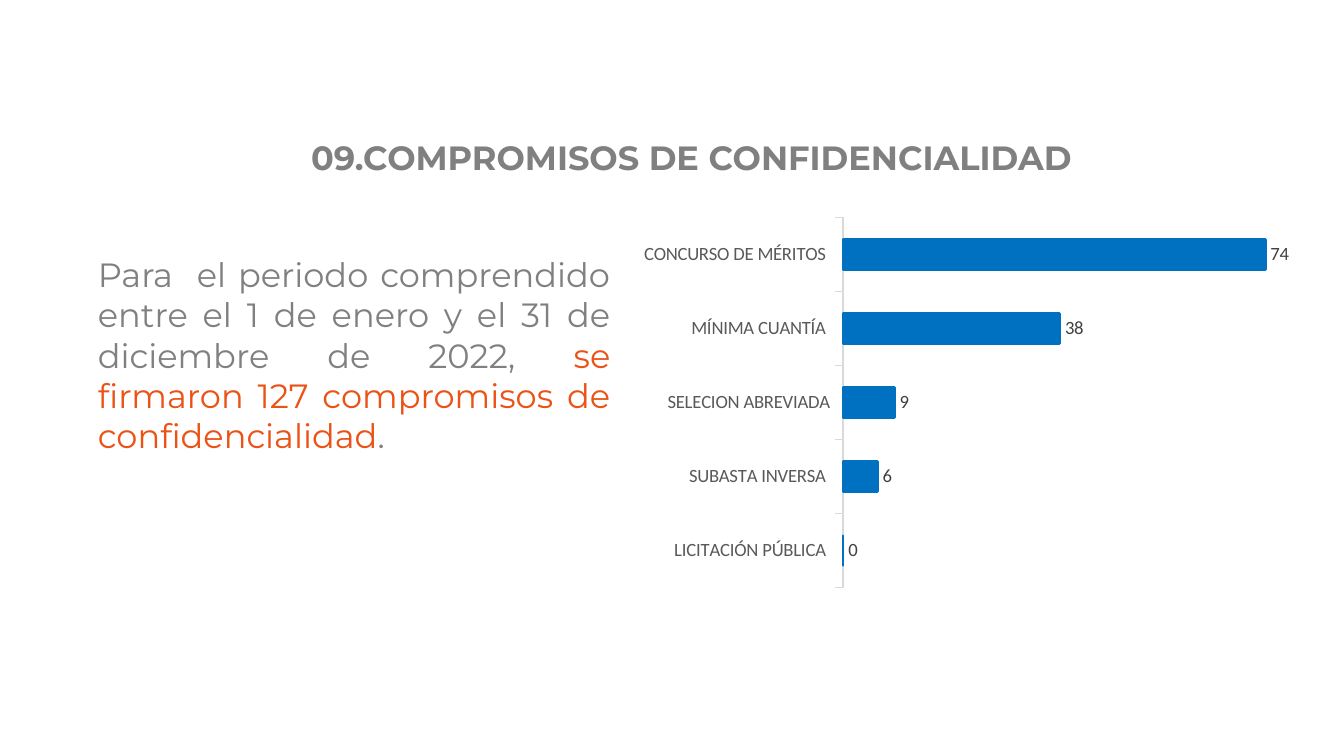
from typing import NamedTuple

from pptx import Presentation
from pptx.chart.data import CategoryChartData
from pptx.dml.color import RGBColor
from pptx.enum.chart import XL_CHART_TYPE, XL_LABEL_POSITION, XL_TICK_MARK
from pptx.enum.text import MSO_ANCHOR, PP_ALIGN
from pptx.util import Inches, Pt

BAR = XL_CHART_TYPE.BAR_CLUSTERED
OUT_END = XL_LABEL_POSITION.OUTSIDE_END
TICK_OUT, TICK_NONE = XL_TICK_MARK.OUTSIDE, XL_TICK_MARK.NONE
CENTER, JUSTIFY = PP_ALIGN.CENTER, PP_ALIGN.JUSTIFY
TOP, MIDDLE = MSO_ANCHOR.TOP, MSO_ANCHOR.MIDDLE
GRAY, ORANGE, BLUE = "808080", "EB5215", "0070C0"
WIDTH = 10
HEIGHT = WIDTH * 9 / 16


class Box(NamedTuple):
    left: float
    top: float
    width: float
    height: float


class Part(NamedTuple):
    text: str
    color: str
    bold: bool = False


class Count(NamedTuple):
    label: str
    value: int


COUNTS = [
    Count("LICITACIÓN PÚBLICA ", 0),
    Count("SUBASTA INVERSA ", 6),
    Count("SELECION ABREVIADA", 9),
    Count("MÍNIMA CUANTÍA ", 38),
    Count("CONCURSO DE MÉRITOS ", 74),
]


def rgb(code: str) -> RGBColor:
    return RGBColor.from_string(code)


def place(box: Box) -> list:
    return [Inches(side) for side in box]


def style(font, name: str, size: float, color: str) -> None:
    font.name = name
    font.size = Pt(size)
    font.color.rgb = rgb(color)


def write(shape, parts: list[Part], align, anchor, wrap: bool):
    """Fill a shape with one paragraph of coloured parts."""
    frame = shape.text_frame
    frame.word_wrap = wrap
    frame.vertical_anchor = anchor
    para = frame.paragraphs[0]
    para.alignment = align
    for part in parts:
        run = para.add_run()
        run.text = part.text
        style(run.font, "Montserrat", 18, part.color)
        run.font.bold = part.bold
    return para


def draw_chart(slide, box: Box, counts: list[Count]) -> None:
    data = CategoryChartData()
    data.categories = [count.label for count in counts]
    data.add_series("Series 1", [count.value for count in counts])
    chart = slide.shapes.add_chart(BAR, *place(box), data).chart
    chart.has_legend = False
    chart.has_title = False
    style(chart.font, "Calibri", 10, "000000")

    # Axes
    axis = chart.category_axis
    axis.major_tick_mark = TICK_OUT
    axis.minor_tick_mark = TICK_NONE
    axis.format.line.color.rgb = rgb("D9D9D9")
    axis.format.line.width = Pt(0.75)
    style(axis.tick_labels.font, "Calibri", 10, "595959")
    scale = chart.value_axis
    scale.visible = False
    scale.has_major_gridlines = False
    scale.minimum_scale, scale.maximum_scale = 0, 80

    # Bars and their values
    plot = chart.plots[0]
    plot.gap_width = 150
    plot.vary_by_categories = False
    bars = plot.series[0]
    bars.format.fill.solid()
    bars.format.fill.fore_color.rgb = rgb(BLUE)
    bars.format.line.color.rgb = rgb(BLUE)
    bars.format.line.width = Pt(1.5)
    labels = bars.data_labels
    labels.show_value = True
    labels.position = OUT_END
    style(labels.font, "Calibri", 10, "404040")


def main() -> None:
    deck = Presentation()
    deck.slide_width, deck.slide_height = Inches(WIDTH), Inches(HEIGHT)
    slide = deck.slides.add_slide(deck.slide_layouts[6])

    # Chart
    draw_chart(slide, Box(4.69, 1.56, 5.08, 2.87), COUNTS)

    # Summary
    note = slide.shapes.add_textbox(*place(Box(0.63, 1.84, 4.01, 1.62)))
    write(note, [
        Part("Para  el periodo comprendido entre el 1 de enero "
             "y el 31 de diciembre de 2022, ", GRAY),
        Part("se firmaron 127 compromisos de confidencialidad", ORANGE),
        Part(".", GRAY),
    ], JUSTIFY, TOP, True)

    # Title
    title = slide.shapes.add_textbox(*place(Box(2.17, 1, 5.95, 0.37)))
    para = write(title, [Part("09.COMPROMISOS DE CONFIDENCIALIDAD", GRAY, True)],
                 CENTER, MIDDLE, False)
    para.line_spacing = 0.9

    deck.save("out.pptx")


if __name__ == "__main__":
    main()
